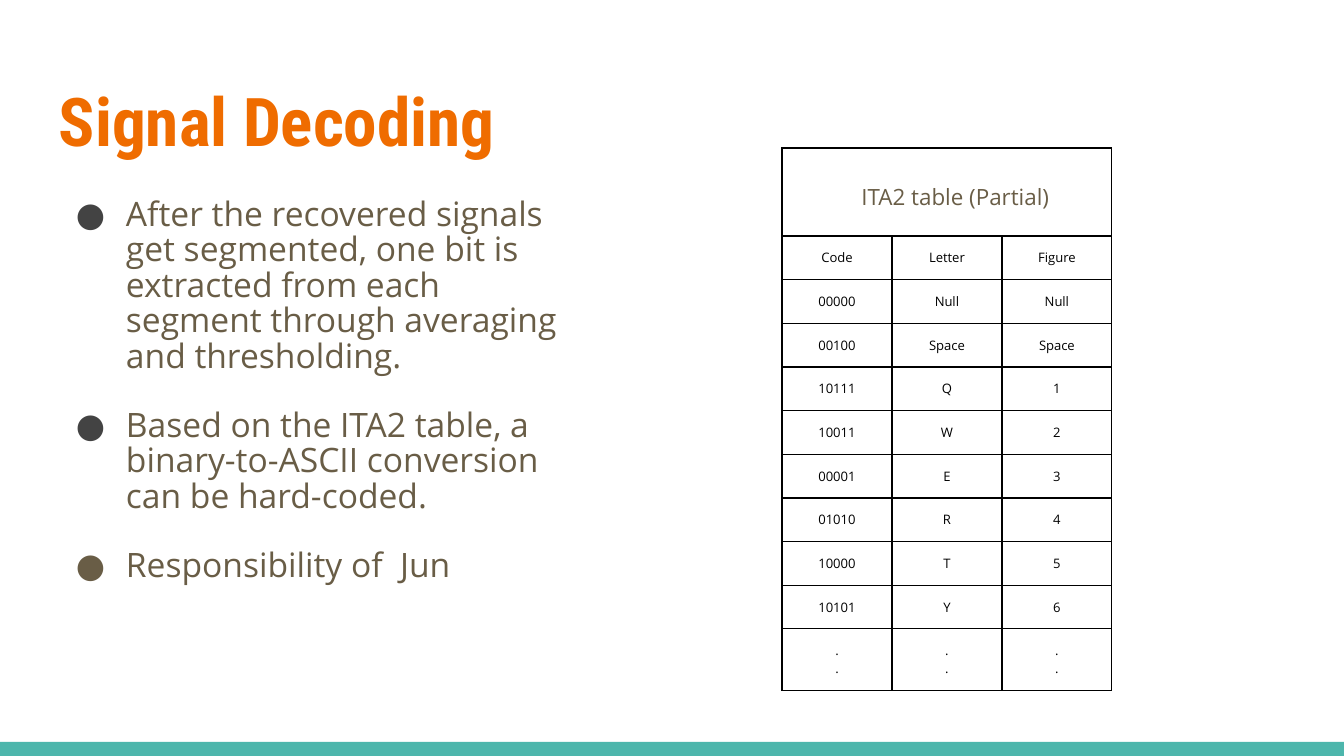
from lxml import etree
from pptx import Presentation
from pptx.dml.color import RGBColor
from pptx.enum.shapes import MSO_SHAPE
from pptx.enum.text import MSO_ANCHOR, MSO_AUTO_SIZE, PP_ALIGN
from pptx.oxml import parse_xml
from pptx.oxml.ns import nsdecls, qn
from pptx.util import Pt

PX = 914400 / 134.4
RECT = MSO_SHAPE.RECTANGLE
TOP, MIDDLE = MSO_ANCHOR.TOP, MSO_ANCHOR.MIDDLE
LEFT, CENTER = PP_ALIGN.LEFT, PP_ALIGN.CENTER
NO_FIT = MSO_AUTO_SIZE.NONE

TEAL = RGBColor(0x4D, 0xB6, 0xAC)
ORANGE = RGBColor(0xEF, 0x6C, 0x00)
BROWN = RGBColor(0x69, 0x5D, 0x46)
GRAY = RGBColor(0x43, 0x43, 0x43)
BLACK = RGBColor(0, 0, 0)
WHITE = RGBColor(0xFF, 0xFF, 0xFF)

BULLETS = [
    ("After the recovered signals get segmented, one bit is extracted from "
     "each segment through averaging and thresholding.", GRAY),
    ("Based on the ITA2 table, a binary-to-ASCII conversion can be hard-coded.", GRAY),
    ("Responsibility of  Jun", BROWN),
]
ROWS = [
    ("ITA2 table (Partial)", "", ""),
    ("Code", "Letter", "Figure"),
    ("00000", "Null", "Null"),
    ("00100", "Space", "Space"),
    ("10111", "Q", "1"),
    ("10011", "W", "2"),
    ("00001", "E", "3"),
    ("01010", "R", "4"),
    ("10000", "T", "5"),
    ("10101", "Y", "6"),
    (".\n.", ".\n.", ".\n."),
]
COL_WIDTH = 110
ROW_HEIGHTS = [88] + [40] * 9 + [55]


def px(n):
    return round(n * PX)


def add_run(p, text, size, color, font="Open Sans", bold=False):
    r = p.add_run()
    r.text = text
    r.font.size, r.font.name, r.font.bold = Pt(size), font, bold
    r.font.color.rgb = color


prs = Presentation()
prs.slide_width, prs.slide_height = px(1344), px(756)
s = prs.slides.add_slide(prs.slide_layouts[1])
s.background.fill.solid()
s.background.fill.fore_color.rgb = WHITE

# Bottom band
band = s.shapes.add_shape(RECT, 0, px(742), px(1344), px(14))
band.shadow.inherit = False
band.fill.solid()
band.fill.fore_color.rgb = TEAL
band.line.fill.background()

# Title and body placeholders
title, body = s.shapes.title, s.placeholders[1]
for sp, box in ((title, (46, 66, 559, 101)), (body, (46, 185, 542, 547))):
    sp.left, sp.top, sp.width, sp.height = map(px, box)
    tf = sp.text_frame
    tf.word_wrap, tf.auto_size, tf.vertical_anchor = True, NO_FIT, TOP
    tf.margin_left = tf.margin_right = tf.margin_top = tf.margin_bottom = px(13)

p = title.text_frame.paragraphs[0]
p.alignment = LEFT
add_run(p, "Signal Decoding", 36, ORANGE, "Roboto Condensed", True)

tf = body.text_frame
for i, (text, bullet_color) in enumerate(BULLETS):
    p = tf.add_paragraph() if i else tf.paragraphs[0]
    p.alignment, p.line_spacing = LEFT, 0.88
    p.space_before, p.space_after = Pt(12), Pt(6)
    add_run(p, text, 18, BROWN)
    pPr = p._p.get_or_add_pPr()
    pPr.set("marL", str(px(67)))
    pPr.set("indent", str(-px(50)))
    color = etree.SubElement(pPr, qn("a:buClr"))
    etree.SubElement(color, qn("a:srgbClr"), val=str(bullet_color))
    etree.SubElement(pPr, qn("a:buFont"), typeface="Open Sans")
    etree.SubElement(pPr, qn("a:buChar"), char="●")

# Code table
frame = s.shapes.add_table(len(ROWS), 3, px(782), px(148),
                           px(3 * COL_WIDTH), px(sum(ROW_HEIGHTS)))
table = frame.table
table.first_row = table.horz_banding = False
for col in table.columns:
    col.width = px(COL_WIDTH)
for row, height in zip(table.rows, ROW_HEIGHTS):
    row.height = px(height)
table.cell(0, 0).merge(table.cell(0, 2))

for i, texts in enumerate(ROWS):
    for j, text in enumerate(texts):
        cell = table.cell(i, j)
        tcPr = cell._tc.get_or_add_tcPr()
        for side in ("lnL", "lnR", "lnT", "lnB"):
            tcPr.append(parse_xml(
                f'<a:{side} {nsdecls("a")} w="{Pt(0.75)}"><a:solidFill>'
                f'<a:srgbClr val="{BLACK}"/></a:solidFill></a:{side}>'))
        cell.fill.background()
        cell.vertical_anchor = MIDDLE
        cell.margin_left = cell.margin_right = px(13)
        cell.margin_top = cell.margin_bottom = px(13)
        size, color = (7, BLACK) if i else (12, BROWN)
        for k, line in enumerate(text.split("\n")):
            tf = cell.text_frame
            p = tf.add_paragraph() if k else tf.paragraphs[0]
            p.alignment = CENTER
            if line:
                add_run(p, line, size, color)

# The heading sits slightly right of and below the middle of its cell
heading = table.cell(0, 0)
heading.margin_left, heading.margin_top = px(30), px(22)

prs.save("out.pptx")
